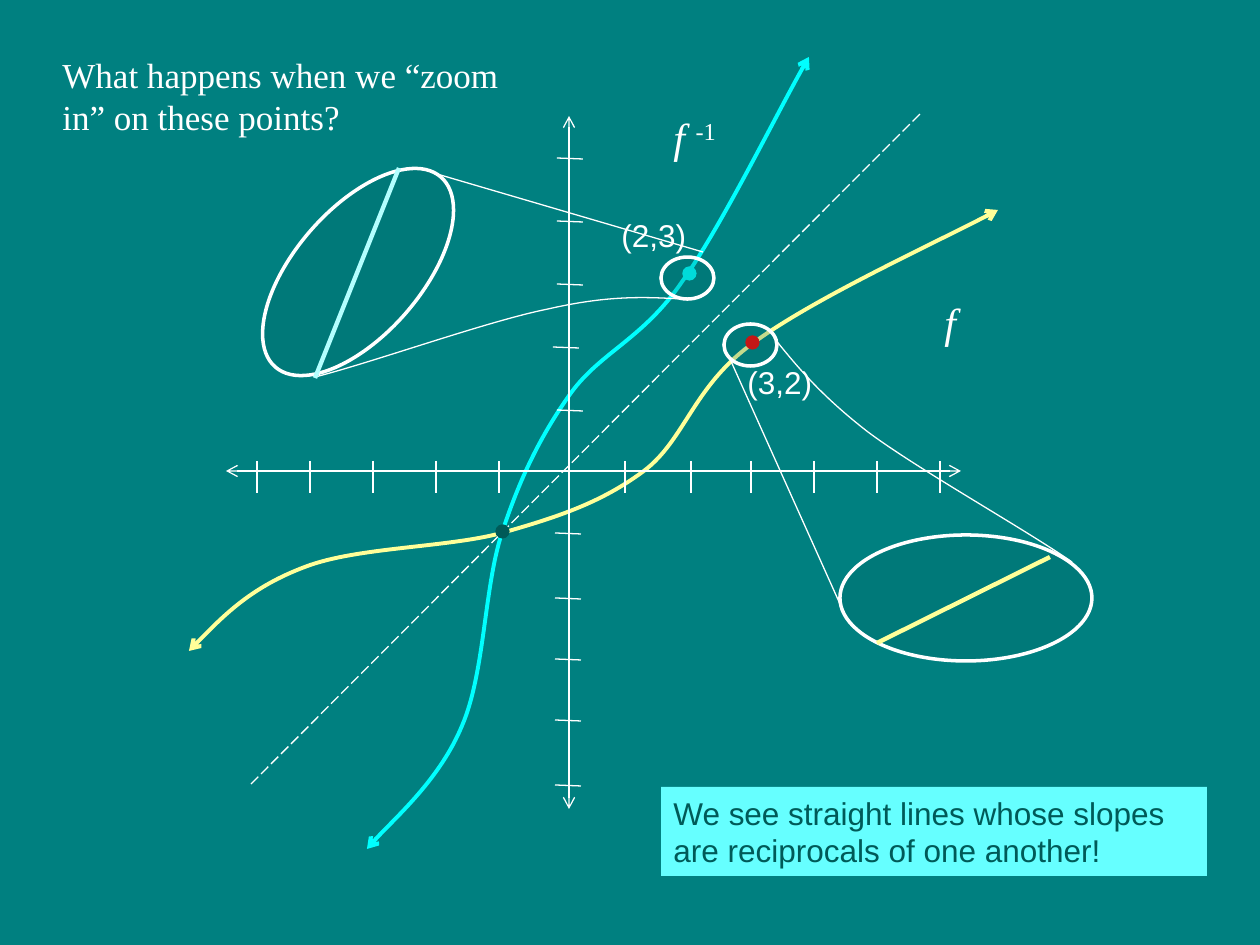
from lxml import etree
from pptx import Presentation
from pptx.dml.color import RGBColor
from pptx.enum.dml import MSO_LINE
from pptx.enum.shapes import MSO_CONNECTOR, MSO_SHAPE
from pptx.enum.text import MSO_AUTO_SIZE
from pptx.oxml.ns import qn
from pptx.util import Pt

SCALE = 914400 / 126  # EMU per px
STRAIGHT = MSO_CONNECTOR.STRAIGHT
ELLIPSE, RECTANGLE = MSO_SHAPE.OVAL, MSO_SHAPE.RECTANGLE
LONG_DASH = MSO_LINE.LONG_DASH
FIT_SHAPE = MSO_AUTO_SIZE.SHAPE_TO_FIT_TEXT
SANS, SERIF = "Arial", "Times New Roman"

COLORS = {
    "background": "008080",
    "white": "FFFFFF",
    "function": "FFFF99",
    "inverse": "00FFFF",
    "inverse_zoom": "B3FFFF",
    "red": "FF0000",
    "dark": "005A58",
    "lens": "006462",
    "answer": "66FFFF",
}

# Curve points: a start, then two handles and an end for each section
FUNCTION = [
    (189, 651), (219, 620), (252, 587), (305, 567),
    (357, 547), (446, 548), (502, 533), (558, 517), (601, 503), (644, 471),
    (685, 440), (693, 387), (752, 344), (811, 300), (946, 238), (998, 210),
]
INVERSE = [
    (367, 849), (383, 829), (440, 779), (462, 726),
    (485, 673), (484, 588), (502, 533), (520, 478), (541, 435), (571, 393),
    (601, 352), (643, 339), (682, 282), (721, 227), (782, 103), (809, 57),
]
FUNCTION_CALLOUT = [
    (774, 338), (796, 365), (819, 394), (868, 432),
    (919, 470), (1023, 528), (1072, 562),
]
INVERSE_CALLOUT = [
    (682, 299), (645, 297), (609, 295), (548, 309),
    (488, 321), (374, 362), (315, 377),
]

X_TICKS = (257, 310, 373, 436, 499, 625, 691, 751, 814, 877, 940)
Y_TICKS = (
    (557, 158), (557, 221), (557, 284), (553, 347), (557, 410),
    (555, 533), (555, 598), (555, 659), (555, 720), (555, 785),
)


def px(value):
    return round(value * SCALE)


def rgb(name):
    return RGBColor.from_string(COLORS[name])


def stroke(shape, color, width, arrows=False):
    shape.line.color.rgb = rgb(color)
    shape.line.width = Pt(width)
    if arrows:
        outline = shape.element.spPr.find(qn("a:ln"))
        for end in ("a:headEnd", "a:tailEnd"):
            etree.SubElement(outline, qn(end), type="arrow")


def add_line(shapes, start, end, color="white", width=0.75, arrows=False, dash=None):
    line = shapes.add_connector(STRAIGHT, *map(px, start + end))
    stroke(line, color, width)
    if dash:
        line.line.dash_style = dash
    if arrows:
        stroke(line, color, width, arrows)
    etree.SubElement(line.element.spPr, qn("a:effectLst"))


def add_curve(shapes, points, color="white", width=0.75, arrows=False):
    builder = shapes.build_freeform(*points[0], scale=SCALE)
    curve = builder.add_line_segments(points[1:], close=False).convert_to_shape()
    # Turn each three straight segments into one Bezier section
    segments = list(curve.element.iter(qn("a:lnTo")))
    for first in range(0, len(segments), 3):
        section = etree.Element(qn("a:cubicBezTo"))
        segments[first].addprevious(section)
        for segment in segments[first:first + 3]:
            section.append(segment[0])
            segment.getparent().remove(segment)
    curve.fill.background()
    curve.shadow.inherit = False
    stroke(curve, color, width, arrows)


def add_ellipse(shapes, bounds, fill, line, width, opacity=None, rotation=0):
    ellipse = shapes.add_shape(ELLIPSE, *map(px, bounds))
    ellipse.rotation = rotation
    ellipse.shadow.inherit = False
    ellipse.fill.solid()
    ellipse.fill.fore_color.rgb = rgb(fill)
    if opacity:
        color = ellipse.element.spPr.find(qn("a:solidFill"))[0]
        etree.SubElement(color, qn("a:alpha"), val=str(opacity * 1000))
    stroke(ellipse, line, width)


def add_point(shapes, left, top, color):
    add_ellipse(shapes, (left, top, 13, 13), color, color, 0.75)


def add_lens(shapes, bounds, rotation=0):
    add_ellipse(shapes, bounds, "lens", "white", 2, 23, rotation)


def add_text(shapes, bounds, text, size, font, color="white",
             wrap=False, italic=False, superscript=None, fill=None):
    if fill:
        box = shapes.add_shape(RECTANGLE, *map(px, bounds))
        box.fill.solid()
        box.fill.fore_color.rgb = rgb(fill)
        box.line.fill.background()
        box.shadow.inherit = False
    else:
        box = shapes.add_textbox(*map(px, bounds))
    frame = box.text_frame
    frame.word_wrap = wrap
    frame.auto_size = FIT_SHAPE
    para = frame.paragraphs[0]
    para.alignment = 1
    for content in filter(None, (text, superscript)):
        span = para.add_run()
        span.text = content
        span.font.size = Pt(size)
        span.font.name = font
        span.font.color.rgb = rgb(color)
        span.font.italic = italic and content == text
        if content == superscript:
            span.font._element.set("baseline", "30000")


def add_axes(shapes):
    add_line(shapes, (251, 784), (922, 112), dash=LONG_DASH)
    add_line(shapes, (569, 116), (569, 809), arrows=True)
    add_line(shapes, (226, 471), (961, 471), arrows=True)
    for x in X_TICKS:
        add_line(shapes, (x, 461), (x, 493))
    for x, y in Y_TICKS:
        add_line(shapes, (x, y), (x + 26, y + 1))


def main():
    deck = Presentation()
    deck.slide_width, deck.slide_height = px(1260), px(945)
    page = deck.slides.add_slide(deck.slide_layouts[6])
    page.background.fill.solid()
    page.background.fill.fore_color.rgb = rgb("background")
    shapes = page.shapes

    # Graph
    add_curve(shapes, FUNCTION, "function", 2.25, arrows=True)
    add_curve(shapes, INVERSE, "inverse", 2.25, arrows=True)
    add_axes(shapes)

    # Points and labels
    add_point(shapes, 746, 336, "red")
    add_point(shapes, 683, 267, "inverse")
    add_text(shapes, (735, 357, 91, 50), "(3,2)", 18, SANS)
    add_text(shapes, (609, 210, 91, 50), "(2,3)", 18, SANS)
    add_text(shapes, (50, 47, 475, 97),
             "What happens when we “zoom in” on these points?", 20, SERIF, wrap=True)
    add_point(shapes, 496, 525, "dark")
    add_text(shapes, (932, 290, 37, 63), "f", 24, SERIF, italic=True)
    add_text(shapes, (661, 105, 71, 63), "f ", 24, SERIF, italic=True, superscript="-1")

    # Rings around the two points
    add_lens(shapes, (724, 324, 53, 42))
    add_lens(shapes, (661, 257, 53, 42))

    # Zoom on the function
    zoom = shapes.add_group_shape().shapes
    add_lens(zoom, (840, 535, 252, 126))
    add_curve(zoom, FUNCTION_CALLOUT)
    add_line(zoom, (730, 359), (840, 604))
    add_line(zoom, (877, 643), (1050, 557), "function", 2.5)

    # Zoom on the inverse
    zoom = shapes.add_group_shape().shapes
    add_line(zoom, (703, 252), (437, 174))
    add_lens(zoom, (232, 209, 252, 126), rotation=131.1)
    add_curve(zoom, INVERSE_CALLOUT)
    add_line(zoom, (399, 168), (315, 378), "inverse_zoom", 2.5)

    # Answer
    add_text(shapes, (661, 787, 546, 89),
             "We see straight lines whose slopes are reciprocals of one another!",
             18, SANS, "dark", wrap=True, fill="answer")

    deck.save("out.pptx")


if __name__ == "__main__":
    main()
